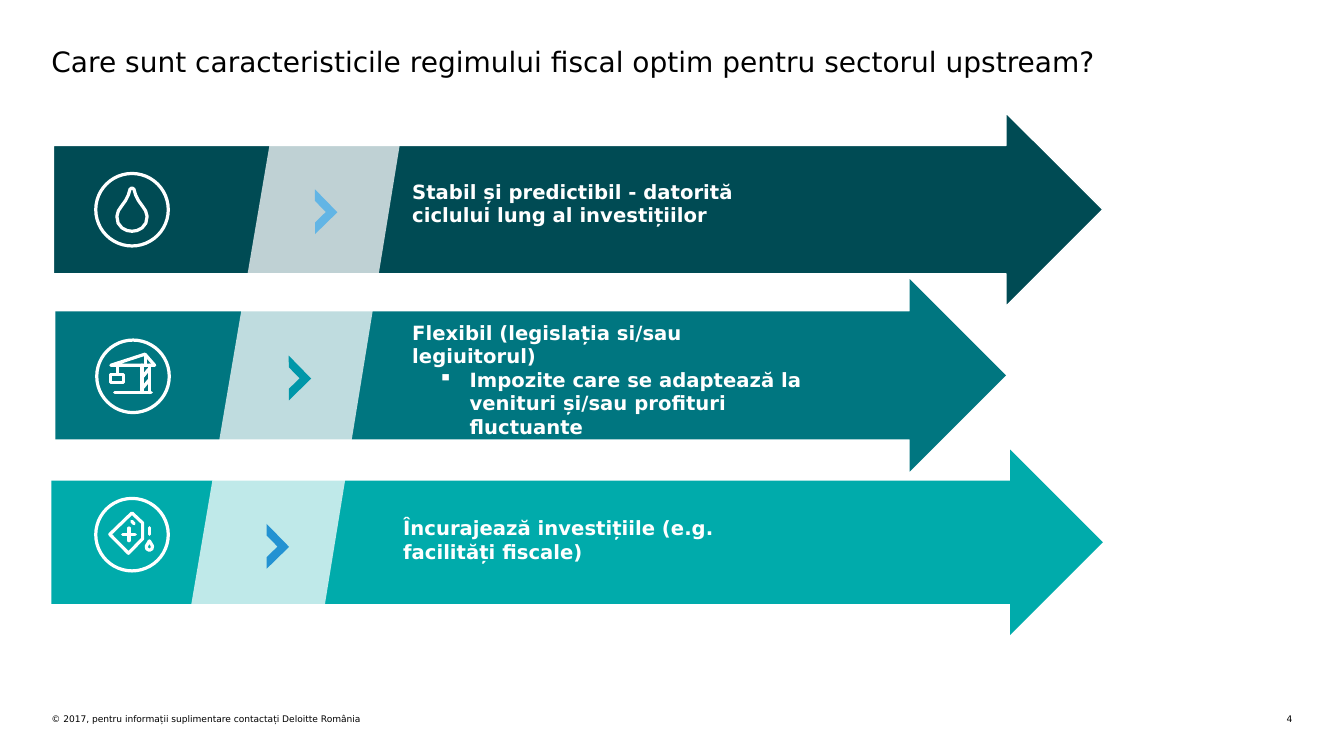
import pptx
import pptx.util
import pptx.dml.color
import pptx.enum.shapes
import pptx.enum.text
import lxml.etree

Pt = pptx.util.Pt
SHAPES = pptx.enum.shapes.MSO_SHAPE
COLORS = {
    "black": "000000", "white": "FFFFFF",
    "stable": "004B54", "flexible": "007680", "encouraging": "00ABAB",
    "stable chevron": "62B5E5", "flexible chevron": "0097A9", "encouraging chevron": "2392D2",
}
FONT = "DejaVu Sans"
STROKE = 2.3


def paint(shape, fill=None, line=None, width=1):
    if fill:
        shape.fill.solid()
        shape.fill.fore_color.rgb = pptx.dml.color.RGBColor.from_string(COLORS[fill])
    elif hasattr(shape, "fill"):
        shape.fill.background()
    if line:
        shape.line.color.rgb = pptx.dml.color.RGBColor.from_string(COLORS[line])
        shape.line.width = Pt(width)
        stroke = shape.line._get_or_add_ln()
        stroke.set("cap", "rnd")
        lxml.etree.SubElement(stroke, pptx.oxml.ns.qn("a:round"))
    else:
        shape.line.fill.background()
    lxml.etree.SubElement(shape._element.spPr, pptx.oxml.ns.qn("a:effectLst"))


def write(box, paragraphs, size, color, bold=False, align=pptx.enum.text.PP_ALIGN.LEFT):
    frame = slide.shapes.add_textbox(*map(Pt, box)).text_frame
    frame.margin_left = frame.margin_right = frame.margin_top = frame.margin_bottom = 0
    frame.word_wrap = True
    for index, text in enumerate(paragraphs):
        paragraph = frame.paragraphs[0] if index == 0 else frame.add_paragraph()
        paragraph.text = text
        paragraph.alignment = align
        if index:
            properties = paragraph._p.get_or_add_pPr()
            properties.set("marL", str(Pt(41)))
            properties.set("indent", str(Pt(-22.3)))
            bullet = lxml.etree.SubElement(properties, pptx.oxml.ns.qn("a:buChar"))
            bullet.set("char", "▪")
        paragraph.font.name = FONT
        paragraph.font.size = Pt(size)
        paragraph.font.bold = bold
        paragraph.font.color.rgb = pptx.dml.color.RGBColor.from_string(COLORS[color])


presentation = pptx.Presentation()
presentation.slide_width = Pt(960)
presentation.slide_height = Pt(540)
slide = presentation.slides.add_slide(presentation.slide_layouts[6])

write((36.7, 31.7, 886, 26.6),
      ["Care sunt caracteristicile regimului fiscal optim pentru sectorul upstream?"], 20, "black")
write((36.7, 509.8, 422, 8),
      ["© 2017, pentru informații suplimentare contactați Deloitte România"], 6.5, "black")
write((898.6, 509.8, 24.5, 8), ["4"], 6.5, "black", align=pptx.enum.text.PP_ALIGN.RIGHT)

for name, box, outline in [
    ("stable", (38.2, 80.6, 749.5, 138.2), "white"),
    ("flexible", (39.6, 199.4, 679, 137.5), None),
    ("encouraging", (36.7, 321.1, 751, 132.5), None),
]:
    arrow = slide.shapes.add_shape(SHAPES.RIGHT_ARROW, *map(Pt, box))
    arrow.adjustments[0] = 0.664
    arrow.adjustments[1] = 0.5
    paint(arrow, name, outline)

band_outline = slide.shapes.build_freeform(Pt(131.8), Pt(460.1))
band_outline.add_line_segments([(Pt(195.1), Pt(88.6)), (Pt(288), Pt(88.6)), (Pt(227.5), Pt(460.1))])
band = band_outline.convert_to_shape()
paint(band, "white")
band_color = band._element.spPr.find(".//" + pptx.oxml.ns.qn("a:srgbClr"))
lxml.etree.SubElement(band_color, pptx.oxml.ns.qn("a:alpha")).set("val", "75000")

for name, left, top in [
    ("stable chevron", 213.8, 139.7),
    ("flexible chevron", 195.1, 258.5),
    ("encouraging chevron", 179.3, 378.7),
]:
    chevron = slide.shapes.add_shape(SHAPES.HALF_FRAME, Pt(left), Pt(top), Pt(22.3), Pt(23))
    chevron.adjustments[0] = 0.266
    chevron.adjustments[1] = 0.259
    chevron.rotation = 135.7
    paint(chevron, name)

write((294.5, 128.2, 280, 33.8),
      ["Stabil și predictibil - datorită ciclului lung al investițiilor"], 14, "white", True)
write((294.5, 229, 280, 85),
      ["Flexibil (legislația si/sau legiuitorul)",
       "Impozite care se adaptează la venituri și/sau profituri fluctuante"], 14, "white", True)
write((288, 368.6, 280, 33.8),
      ["Încurajează investițiile (e.g. facilități fiscale)"], 14, "white", True)

drop_half = [(0, -15.6), (1.4, -14.6), (2.6, -10.5), (4.6, -6.5), (7.5, -2.5), (9.7, 0.8),
             (10.8, 4.8), (9.9, 9.6), (7.2, 13), (3.6, 14.9), (0, 15.4)]
drop = [drop_half + [(-x, y) for x, y in drop_half[-2:0:-1]]]
crane = [
    [(-15.8, -7.9), (8.6, -15.8), (15.5, -7.9)],
    [(-16.2, -1.1), (-6.8, -1.1), (-6.8, 4.3), (-16.2, 4.3)],
    [(-11.2, -7.6), (-11.2, -1.8)],
    [(9, -15), (9, -8)],
    [(6.5, -7.9), (6.5, 11.5)],
    [(11.9, -7.9), (11.9, 11.5)],
    [(-13, 11.5), (13, 11.5)],
    [(7.2, 0), (11.2, -5)],
    [(7.2, 8), (11.2, 3)],
]
fuel_can = [
    [(0, -15.5), (7.6, -8.3), (7.6, 2.9), (-2.5, 13.3), (-15.8, -0.2)],
    [(12.4, 4.5), (14.6, 8.2), (14.2, 10.3), (12.4, 11.2), (10.6, 10.3), (10.2, 8.2)],
    [(-6.7, -0.2), (2.3, -0.2)],
    [(-2.2, -4.7), (-2.2, 4.3)],
    [(-0.2, -9.6), (1.5, -7.7)],
    [(12.4, -5), (12.4, -0.2)],
]
RING = 51.8
for center_x, center_y, strokes in [(94.3, 149.8, drop), (95, 268.8, crane), (94.3, 381.9, fuel_can)]:
    ring = slide.shapes.add_shape(SHAPES.OVAL, Pt(center_x - RING / 2), Pt(center_y - RING / 2),
                                  Pt(RING), Pt(RING))
    paint(ring, line="white", width=STROKE)
    for stroke in strokes:
        points = [(Pt(center_x + x), Pt(center_y + y)) for x, y in stroke]
        if len(points) == 2:
            part = slide.shapes.add_connector(pptx.enum.shapes.MSO_CONNECTOR.STRAIGHT,
                                              *points[0], *points[1])
        else:
            outline = slide.shapes.build_freeform(*points[0])
            outline.add_line_segments(points[1:])
            part = outline.convert_to_shape()
        paint(part, line="white", width=STROKE)

presentation.save("out.pptx")
